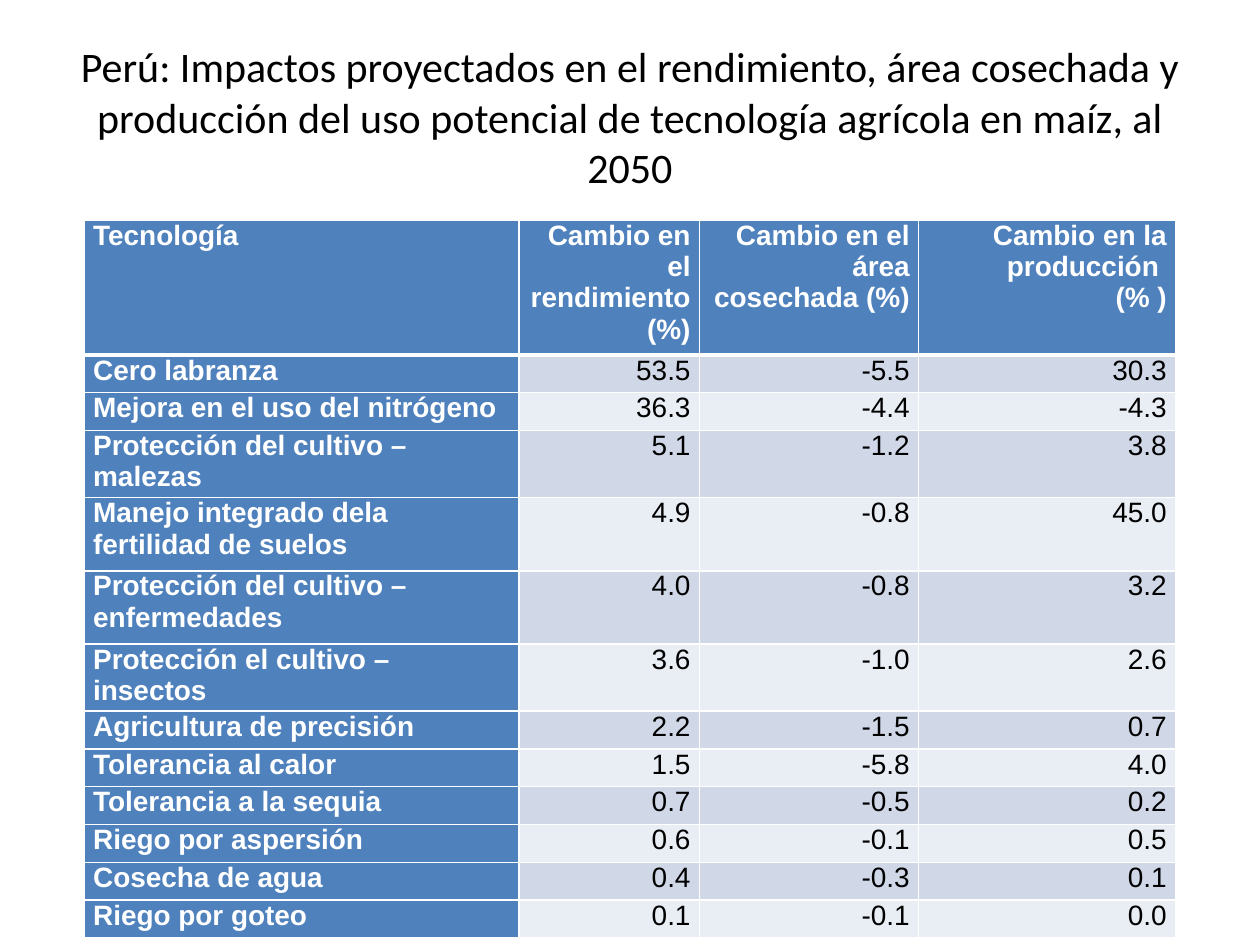
from lxml.etree import SubElement
from pptx import Presentation
from pptx.dml.color import RGBColor
from pptx.enum.text import MSO_ANCHOR, PP_ALIGN
from pptx.oxml.ns import qn
from pptx.util import Inches, Pt

COLORS = {
    "header": "4F81BD",
    "odd_band": "D0D8E8",
    "even_band": "E9EDF4",
    "light": "FFFFFF",
    "dark": "000000",
}
TITLE = (
    "Perú: Impactos proyectados en el rendimiento, área cosechada y "
    "producción del uso potencial de tecnología agrícola en maíz, al 2050"
)
HEADERS = (
    "Tecnología",
    "Cambio en el rendimiento (%)",
    "Cambio en el área cosechada (%)",
    "Cambio en la producción \n(% )",
)
TECHNOLOGIES = [
    ("Cero labranza", "53.5", "-5.5", "30.3"),
    ("Mejora en el uso del nitrógeno", "36.3", "-4.4", "-4.3"),
    ("Protección del cultivo – malezas", "5.1", "-1.2", "3.8"),
    ("Manejo integrado dela fertilidad de suelos", "4.9", "-0.8", "45.0"),
    ("Protección del cultivo – enfermedades", "4.0", "-0.8", "3.2"),
    ("Protección el cultivo – insectos", "3.6", "-1.0", "2.6"),
    ("Agricultura de precisión", "2.2", "-1.5", "0.7"),
    ("Tolerancia al calor", "1.5", "-5.8", "4.0"),
    ("Tolerancia a la sequia", "0.7", "-0.5", "0.2"),
    ("Riego por aspersión", "0.6", "-0.1", "0.5"),
    ("Cosecha de agua", "0.4", "-0.3", "0.1"),
    ("Riego por goteo", "0.1", "-0.1", "0.0"),
]
COLUMN_WIDTHS = (3.45, 1.43, 1.74, 2.04)
ROW_HEIGHT = 0.3
SPECIAL_ROW_HEIGHTS = {0: 1.04, 3: 0.53, 4: 0.58, 5: 0.58, 6: 0.53}


def style_paragraph(paragraph, font_name, size, color, alignment, bold=False):
    paragraph.alignment = alignment
    paragraph.font.name = font_name
    paragraph.font.size = Pt(size)
    paragraph.font.bold = bold
    paragraph.font.color.rgb = RGBColor.from_string(COLORS[color])


def add_title(slide, left, top, width, height):
    shape = slide.shapes.add_textbox(
        Inches(left), Inches(top), Inches(width), Inches(height))
    frame = shape.text_frame
    frame.word_wrap = True
    frame.vertical_anchor = MSO_ANCHOR.MIDDLE
    frame.text = TITLE
    style_paragraph(frame.paragraphs[0], "Calibri", 24, "dark", PP_ALIGN.CENTER)


def set_borders(cell, top_width, bottom_width):
    properties = cell._tc.get_or_add_tcPr()
    widths = {"L": 1, "R": 1, "T": top_width, "B": bottom_width}
    for side, width in widths.items():
        line = SubElement(properties, qn(f"a:ln{side}"), w=str(Pt(width)))
        fill = SubElement(line, qn("a:solidFill"))
        SubElement(fill, qn("a:srgbClr"), val=COLORS["light"])


def fill_cell(cell, text, row, column):
    is_heading = row == 0 or column == 0
    band = "odd_band" if row % 2 else "even_band"
    cell.margin_left = cell.margin_right = Inches(0.07)
    cell.margin_top = cell.margin_bottom = 0
    set_borders(cell, 3 if row == 1 else 1, 3 if row == 0 else 1)
    cell.fill.solid()
    cell.fill.fore_color.rgb = RGBColor.from_string(
        COLORS["header" if is_heading else band])
    cell.text = text
    for paragraph in cell.text_frame.paragraphs:
        style_paragraph(
            paragraph, "Arial", 16, "light" if is_heading else "dark",
            PP_ALIGN.RIGHT if column else PP_ALIGN.LEFT, is_heading)
        paragraph.line_spacing = 1.0


def add_impact_table(slide, left, top, width, height):
    rows = [HEADERS, *TECHNOLOGIES]
    table = slide.shapes.add_table(
        len(rows), len(HEADERS), Inches(left), Inches(top),
        Inches(width), Inches(height)).table
    for column, column_width in zip(table.columns, COLUMN_WIDTHS):
        column.width = Inches(column_width)
    for row, texts in enumerate(rows):
        table.rows[row].height = Inches(SPECIAL_ROW_HEIGHTS.get(row, ROW_HEIGHT))
        for column, text in enumerate(texts):
            fill_cell(table.cell(row, column), text, row, column)


def main():
    presentation = Presentation()
    presentation.slide_width = Inches(10)
    presentation.slide_height = Inches(7.5)
    slide = presentation.slides.add_slide(presentation.slide_layouts[6])
    add_title(slide, 0.5, 0.3, 9, 1.25)
    add_impact_table(slide, 0.67, 1.75, 8.66, 5.66)
    presentation.save("out.pptx")


if __name__ == "__main__":
    main()
